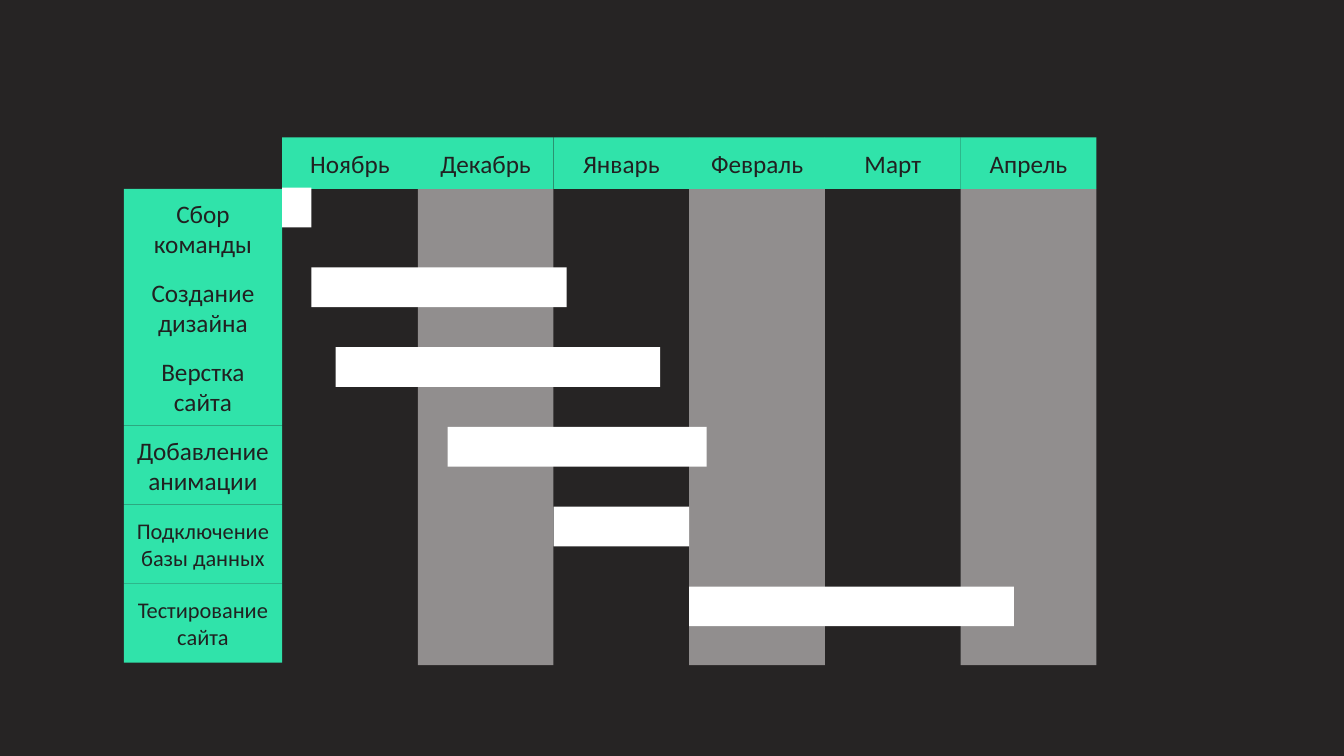
"""Build a six-month Gantt chart slide for a website project."""
from lxml import etree
from pptx import Presentation
from pptx.dml.color import RGBColor
from pptx.enum.shapes import MSO_SHAPE
from pptx.enum.text import MSO_ANCHOR, PP_ALIGN
from pptx.oxml.ns import qn
from pptx.util import Cm, Pt

RECT = MSO_SHAPE.RECTANGLE
MIDDLE = MSO_ANCHOR.MIDDLE
CENTER = PP_ALIGN.CENTER

DARK = RGBColor(0x26, 0x24, 0x24)
INK = RGBColor(0x21, 0x21, 0x21)
GREEN = RGBColor(0x30, 0xE3, 0xAA)
GREY = RGBColor(0xAE, 0xAB, 0xAB)
WHITE = RGBColor(0xFF, 0xFF, 0xFF)

LEFT, TOP = 7.11, 4.76
MONTH_W, HEAD_H = 3.42, 1.3
LABEL_W, ROW_H = 3.99, 1.99
BAR_TOP, BAR_STEP, BAR_H = 4.73, 2.01, 1

MONTHS = ["Ноябрь", "Декабрь", "Январь", "Февраль", "Март", "Апрель"]
TASKS = [
    ("Сбор команды", 18, 0, 0.74),
    ("Создание дизайна", 18, 0.74, 6.43),
    ("Верстка сайта", 18, 1.35, 8.18),
    ("Добавление анимации", 18, 4.17, 6.53),
    ("Подключение базы данных", 16, 2 * MONTH_W, MONTH_W),
    ("Тестирование сайта", 16, 3 * MONTH_W, 8.18),
]


class Gantt:
    """Hold the chart style and the group that its parts go into."""

    def __init__(self, slide, font="Calibri"):
        """Paint the background and open the group."""
        self.font = font
        slide.background.fill.solid()
        slide.background.fill.fore_color.rgb = DARK
        self.group = slide.shapes.add_group_shape()

    def block(self, x, y, w, h, color):
        """Add a plain rectangle measured in centimetres."""
        shape = self.group.shapes.add_shape(RECT, Cm(x), Cm(y), Cm(w), Cm(h))
        shape.shadow.inherit = False
        shape.fill.solid()
        shape.fill.fore_color.rgb = color
        shape.line.fill.background()
        return shape

    def stripe(self, x, y, w, h, alpha=79):
        """Add a translucent month column."""
        shape = self.block(x, y, w, h, GREY)
        color = shape.fill._xPr.find(".//" + qn("a:srgbClr"))
        etree.SubElement(color, qn("a:alpha"), val=str(alpha * 1000))

    def label(self, text, x, y, w, h, size=18):
        """Add a green cell with centred text."""
        frame = self.block(x, y, w, h, GREEN).text_frame
        frame.word_wrap = True
        frame.vertical_anchor = MIDDLE
        frame.text = text
        para = frame.paragraphs[0]
        para.alignment = CENTER
        para.font.name = self.font
        para.font.size = Pt(size)
        para.font.color.rgb = INK


def main():
    """Lay out the months, tasks and bars."""
    deck = Presentation()
    deck.slide_width, deck.slide_height = Cm(33.87), Cm(19.05)
    chart = Gantt(deck.slides.add_slide(deck.slide_layouts[6]))

    for col in range(1, len(MONTHS), 2):
        chart.stripe(LEFT + col * MONTH_W, TOP, MONTH_W, 12)
    for col, month in enumerate(MONTHS):
        chart.label(month, LEFT + col * MONTH_W, TOP - HEAD_H, MONTH_W, HEAD_H)
    for row, (task, size, _, _) in enumerate(TASKS):
        chart.label(task, LEFT - LABEL_W, TOP + row * ROW_H, LABEL_W, ROW_H, size)
    for row, (_, _, start, span) in enumerate(TASKS):
        chart.block(LEFT + start, BAR_TOP + row * BAR_STEP, span, BAR_H, WHITE)

    deck.save("out.pptx")


if __name__ == "__main__":
    main()
